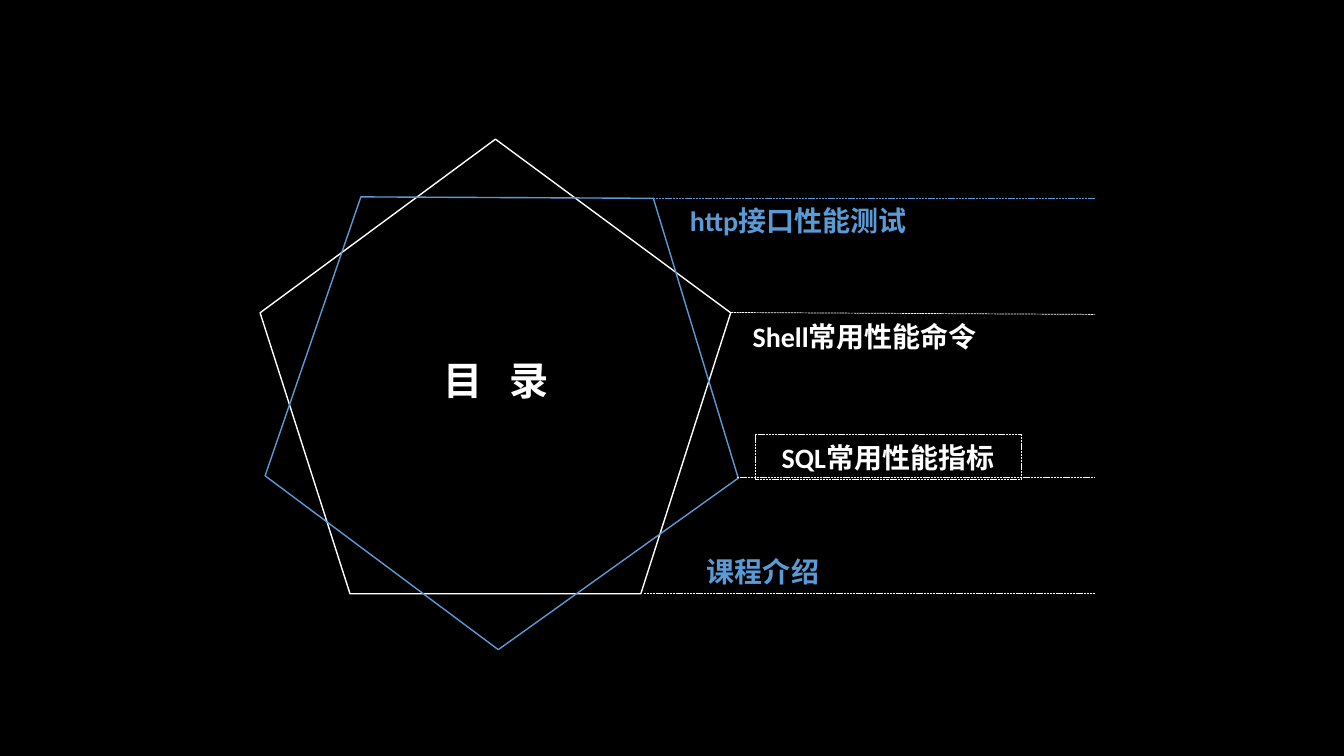
from pptx import Presentation
from pptx.dml.color import RGBColor
from pptx.enum.dml import MSO_LINE
from pptx.enum.shapes import MSO_CONNECTOR, MSO_SHAPE
from pptx.enum.text import MSO_ANCHOR, MSO_AUTO_SIZE, PP_ALIGN
from pptx.oxml.ns import qn
from pptx.util import Pt
from lxml import etree

PENTAGON = MSO_SHAPE.REGULAR_PENTAGON
RECTANGLE = MSO_SHAPE.RECTANGLE
STRAIGHT = MSO_CONNECTOR.STRAIGHT
DASH = MSO_LINE.SQUARE_DOT
CENTER = PP_ALIGN.CENTER
TOP, MIDDLE = MSO_ANCHOR.TOP, MSO_ANCHOR.MIDDLE
GROW = MSO_AUTO_SIZE.SHAPE_TO_FIT_TEXT

BLACK, WHITE, BLUE = "000000", "FFFFFF", "5B9BD5"
LABEL_HEIGHT = 31.7
EMBLEM_BOX = (185.8, 99.4, 336.2, 324.7)
CONTENTS_BOX = (460.1, 141.8, 321.8, 282.3)

ENTRIES = [
    {"text": "http接口性能测试", "color": BLUE, "line_color": BLUE, "start": 6.5, "y": 0,
     "drop": 0, "label_x": 25.2, "label_y": 0, "width": 169.9, "framed": False},
    {"text": "Shell常用性能命令", "color": WHITE, "line_color": WHITE, "start": 61.9, "y": 81.4,
     "drop": 1.4, "label_x": 66.2, "label_y": 82.8, "width": 182.9, "framed": False},
    {"text": "SQL常用性能指标", "color": WHITE, "line_color": WHITE, "start": 66.2, "y": 199.4,
     "drop": 0, "label_x": 79.2, "label_y": 168.7, "width": 190.1, "framed": True},
    {"text": "课程介绍", "color": BLUE, "line_color": WHITE, "start": 0, "y": 282.3,
     "drop": 0, "label_x": 0, "label_y": 250.6, "width": 169.9, "framed": False},
]


def rgb(color):
    """Turn a hex string into a colour."""
    return RGBColor.from_string(color)


def set_attributes(target, values):
    """Set every attribute named in a dict."""
    for name, value in values.items():
        setattr(target, name, value)


def style_line(line, color, width, dash=None):
    """Give an outline its colour, width and dash."""
    line.color.rgb = rgb(color)
    set_attributes(line, {"width": Pt(width), "dash_style": dash})


def add_outline(slide, kind, box, color, width, dash=None, rotation=0):
    """Add an unfilled shape with a plain outline."""
    shape = slide.shapes.add_shape(kind, *map(Pt, box))
    shape.shadow.inherit = False
    shape.rotation = rotation
    shape.fill.background()
    style_line(shape.line, color, width, dash)
    return shape


def write_text(shape, text, size, color, anchor=TOP):
    """Write one centred bold line and return its paragraph."""
    frame = shape.text_frame
    set_attributes(frame, {"word_wrap": True, "auto_size": GROW, "vertical_anchor": anchor})
    paragraph = frame.paragraphs[0]
    paragraph.alignment = CENTER
    for part in text:
        run = paragraph.add_run()
        run.text = part
        set_attributes(run.font, {"name": "Calibri", "size": Pt(size), "bold": True})
        run.font.color.rgb = rgb(color)
    return paragraph


def add_dashed_line(slide, start, end, color):
    """Draw a thin dashed line without a shadow."""
    connector = slide.shapes.add_connector(STRAIGHT, *map(Pt, start + end))
    style_line(connector.line, color, 0.5, DASH)
    etree.SubElement(connector._element.spPr, qn("a:effectLst"))


def add_emblem(slide, box):
    """Place two crossed pentagons and the title inside them."""
    left, top, width, height = box
    add_outline(slide, PENTAGON, box, WHITE, 1)
    add_outline(slide, PENTAGON, (left + 15.8, top + 10.1, width, height), BLUE, 1, rotation=36.7)
    title_box = (left + 63.3, top + 151.9, 210.2, 41)
    title = slide.shapes.add_textbox(*map(Pt, title_box))
    paragraph = write_text(title, ["目 ", "录"], 28, WHITE)
    paragraph.runs[0].font._element.set("spc", "635")


def add_contents(slide, box):
    """Place the dashed leader lines and their labels."""
    left, top, width, _ = box
    for entry in ENTRIES:
        y = top + entry["y"]
        add_dashed_line(slide, (left + entry["start"], y),
                        (left + width, y + entry["drop"]), entry["line_color"])
    for entry in ENTRIES:
        label_box = (left + entry["label_x"], top + entry["label_y"], entry["width"], LABEL_HEIGHT)
        if entry["framed"]:
            label = add_outline(slide, RECTANGLE, label_box, WHITE, 0.5, DASH)
        else:
            label = slide.shapes.add_textbox(*map(Pt, label_box))
        write_text(label, [entry["text"]], 20, entry["color"], MIDDLE if entry["framed"] else TOP)


def main():
    """Build and save the contents slide."""
    presentation = Presentation()
    set_attributes(presentation, {"slide_width": Pt(960), "slide_height": Pt(540)})
    slide = presentation.slides.add_slide(presentation.slide_layouts[6])
    slide.background.fill.solid()
    slide.background.fill.fore_color.rgb = rgb(BLACK)
    add_emblem(slide, EMBLEM_BOX)
    add_contents(slide, CONTENTS_BOX)
    presentation.save("out.pptx")


if __name__ == "__main__":
    main()
